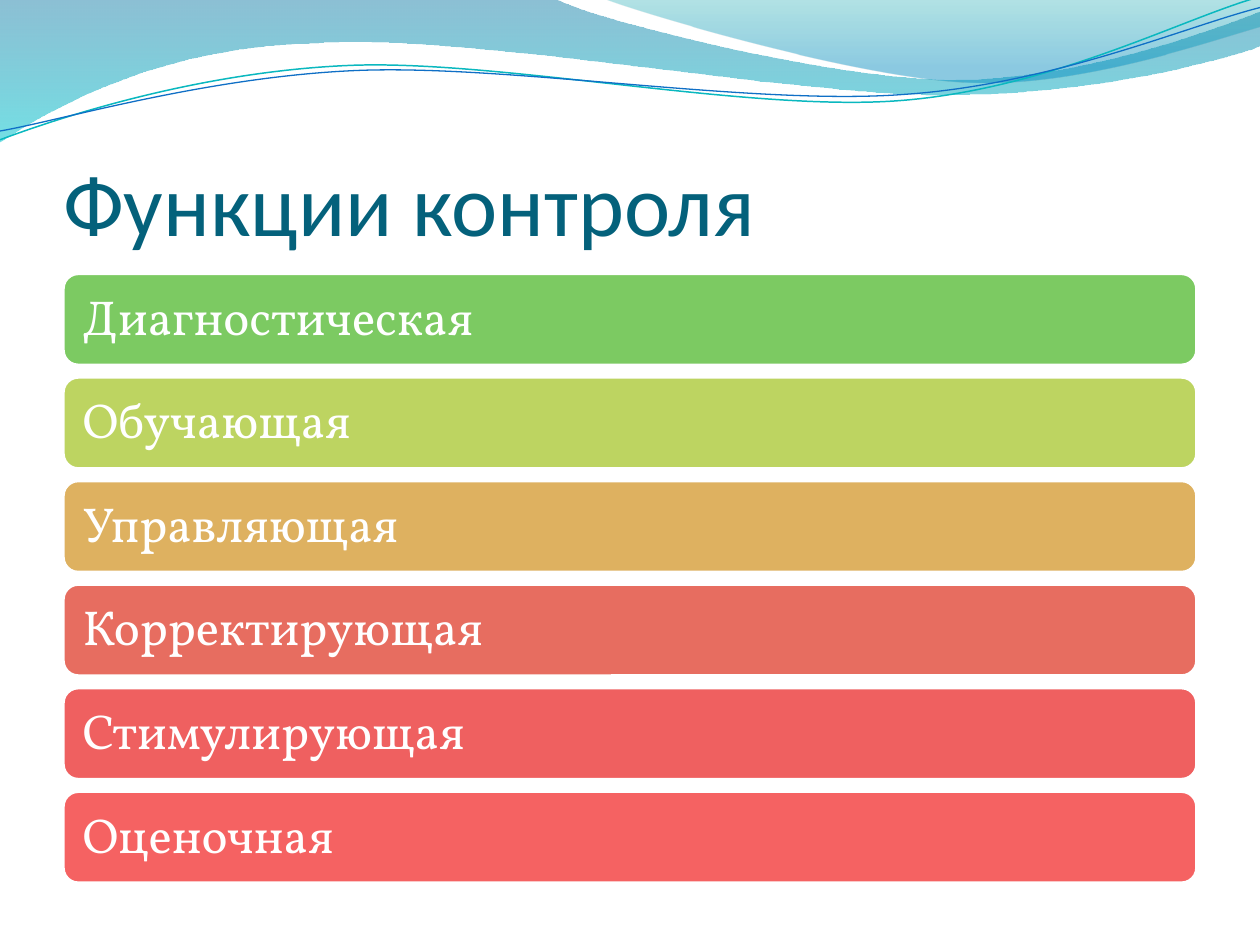
import pptx
import pptx.util
import pptx.dml.color
import pptx.enum.shapes
import pptx.enum.text
import pptx.oxml.ns
import lxml.etree

Inches, Pt = pptx.util.Inches, pptx.util.Pt
RGBColor = pptx.dml.color.RGBColor
Anchor = pptx.enum.text.MSO_ANCHOR
Align = pptx.enum.text.PP_ALIGN
qn = pptx.oxml.ns.qn

WHITE = RGBColor(0xFF, 0xFF, 0xFF)
NAVY = RGBColor(0x04, 0x61, 0x7B)
TEAL = RGBColor(0x0A, 0xB8, 0xBF)
BLUE = RGBColor(0x0F, 0x6F, 0xC6)

# Wave fills: position, colour, opacity in percent
LEFT_FADE = [(0, RGBColor(0x00, 0x74, 0xA1), 45),
             (1, RGBColor(0x00, 0xC6, 0xCF), 55)]
RIGHT_FADE = [(0, RGBColor(0x00, 0xA1, 0xA9), 30),
              (0.8, RGBColor(0x00, 0x8B, 0xBF), 45)]

# Outlines: a pair is a straight step, six numbers are a Bezier curve
LEFT_WAVE = [(0, 0), (4.4, -0.01),
             (4.76, 0.17, 6.64, 0.63, 7.58, 0.63),
             (8.53, 0.63, 9.58, 0.26, 10, 0.09), (10.01, 0.36),
             (9.83, 0.44, 8.7, 0.76, 7.46, 0.75),
             (6.22, 0.75, 3.82, 0.28, 2.57, 0.34),
             (1.29, 0.36, 0.46, 0.83, -0.01, 1.13)]
RIGHT_WAVE = [(4.79, -0.01), (5.09, 0.11, 6.82, 0.62, 7.69, 0.65),
              (8.56, 0.69, 9.61, 0.32, 10, 0.21), (10, 0)]
TEAL_LINE = [(0, 1.11), (0.48, 0.93, 1.58, 0.57, 2.77, 0.52),
             (3.95, 0.47, 5.93, 0.89, 7.13, 0.8),
             (8.33, 0.71, 9.38, 0.15, 9.98, -0.02)]
BLUE_LINE = [(0, 1.04), (0.47, 0.96, 1.64, 0.61, 2.83, 0.56),
             (4.03, 0.51, 5.97, 0.84, 7.17, 0.75),
             (8.36, 0.67, 9.41, 0.21, 10, 0.06)]

BARS = [("Диагностическая", RGBColor(0x7C, 0xCA, 0x62)),
        ("Обучающая", RGBColor(0xBD, 0xD4, 0x61)),
        ("Управляющая", RGBColor(0xDE, 0xB1, 0x60)),
        ("Корректирующая", RGBColor(0xE7, 0x6D, 0x60)),
        ("Стимулирующая", RGBColor(0xEF, 0x60, 0x60)),
        ("Оценочная", RGBColor(0xF5, 0x62, 0x62))]


def add_path(slide, box, steps, close):
    left, top = box
    places = [[(left + Inches(x), top + Inches(y))
               for x, y in zip(step[::2], step[1::2])] for step in steps]
    ends = [spots[-1] for spots in places]
    pen = slide.shapes.build_freeform(*ends[0])
    pen.add_line_segments(ends[1:], close=close)
    shape = pen.convert_to_shape()
    shape.shadow.inherit = False
    # Bend the steps that have control points
    lines = list(shape.element.spPr.iter(qn("a:lnTo")))
    for line, spots in zip(lines, places[1:]):
        if len(spots) == 3:
            bend = lxml.etree.Element(qn("a:cubicBezTo"))
            for x, y in spots:
                lxml.etree.SubElement(bend, qn("a:pt"),
                                      x=str(x - shape.left),
                                      y=str(y - shape.top))
            line.getparent().replace(line, bend)
    return shape


def add_wave(slide, box, steps, fade):
    shape = add_path(slide, box, steps, True)
    shape.line.fill.background()
    shape.fill.gradient()
    shape.fill.gradient_angle = 270
    for stop, (place, color, alpha) in zip(shape.fill.gradient_stops, fade):
        stop.position = place
        stop.color.rgb = color
    # Opacity of each stop
    marks = shape.element.spPr.iter(qn("a:srgbClr"))
    for mark, (place, color, alpha) in zip(marks, fade):
        lxml.etree.SubElement(mark, qn("a:alpha"), val=str(alpha * 1000))


def add_curve(slide, box, steps, color, width):
    shape = add_path(slide, box, steps, False)
    shape.fill.background()
    shape.line.color.rgb = color
    shape.line.width = Pt(width)


def add_banner(slide, box):
    add_wave(slide, box, LEFT_WAVE, LEFT_FADE)
    add_wave(slide, box, RIGHT_WAVE, RIGHT_FADE)
    add_curve(slide, box, TEAL_LINE, TEAL, 0.85)
    add_curve(slide, box, BLUE_LINE, BLUE, 0.75)


def add_text(frame, text, font, size, color):
    para = frame.paragraphs[0]
    para.alignment = Align.LEFT
    run = para.add_run()
    run.text = text
    run.font.name = font
    run.font.size = Pt(size)
    run.font.color.rgb = color
    return para


def set_title(slide, box, text):
    title = slide.shapes.title
    title.left, title.top, title.width, title.height = box
    frame = title.text_frame
    frame.word_wrap = True
    frame.vertical_anchor = Anchor.BOTTOM
    frame.margin_left = frame.margin_right = frame.margin_bottom = 0
    frame.margin_top = Inches(0.05)
    add_text(frame, text, "Calibri", 50, NAVY)


def add_bars(slide, box, bars):
    left, top, width, height = box
    tall = Inches(0.73)
    pitch = (height - tall) // (len(bars) - 1)
    for i, (text, color) in enumerate(bars):
        bar = slide.shapes.add_shape(
            pptx.enum.shapes.MSO_SHAPE.ROUNDED_RECTANGLE,
            left, top + i * pitch, width, tall)
        bar.shadow.inherit = False
        bar.fill.solid()
        bar.fill.fore_color.rgb = color
        bar.line.color.rgb = WHITE
        bar.line.width = Pt(2)
        frame = bar.text_frame
        frame.word_wrap = True
        frame.vertical_anchor = Anchor.MIDDLE
        frame.margin_left = frame.margin_right = Inches(0.12)
        frame.margin_top = frame.margin_bottom = Inches(0.12)
        add_text(frame, text, "Vollkorn", 28, WHITE).line_spacing = 0.9


def main():
    deck = pptx.Presentation()
    deck.slide_width, deck.slide_height = Inches(10), Inches(7.5)
    slide = deck.slides.add_slide(deck.slide_layouts[5])
    # Waves along the top
    add_banner(slide, (Inches(0), Inches(0)))
    # Heading
    set_title(slide, (Inches(0.5), Inches(0.77), Inches(9), Inches(1.25)),
              "Функции контроля")
    # Stack of functions
    add_bars(slide, (Inches(0.5), Inches(2.17), Inches(9), Inches(4.84)), BARS)
    deck.save("out.pptx")


if __name__ == "__main__":
    main()
